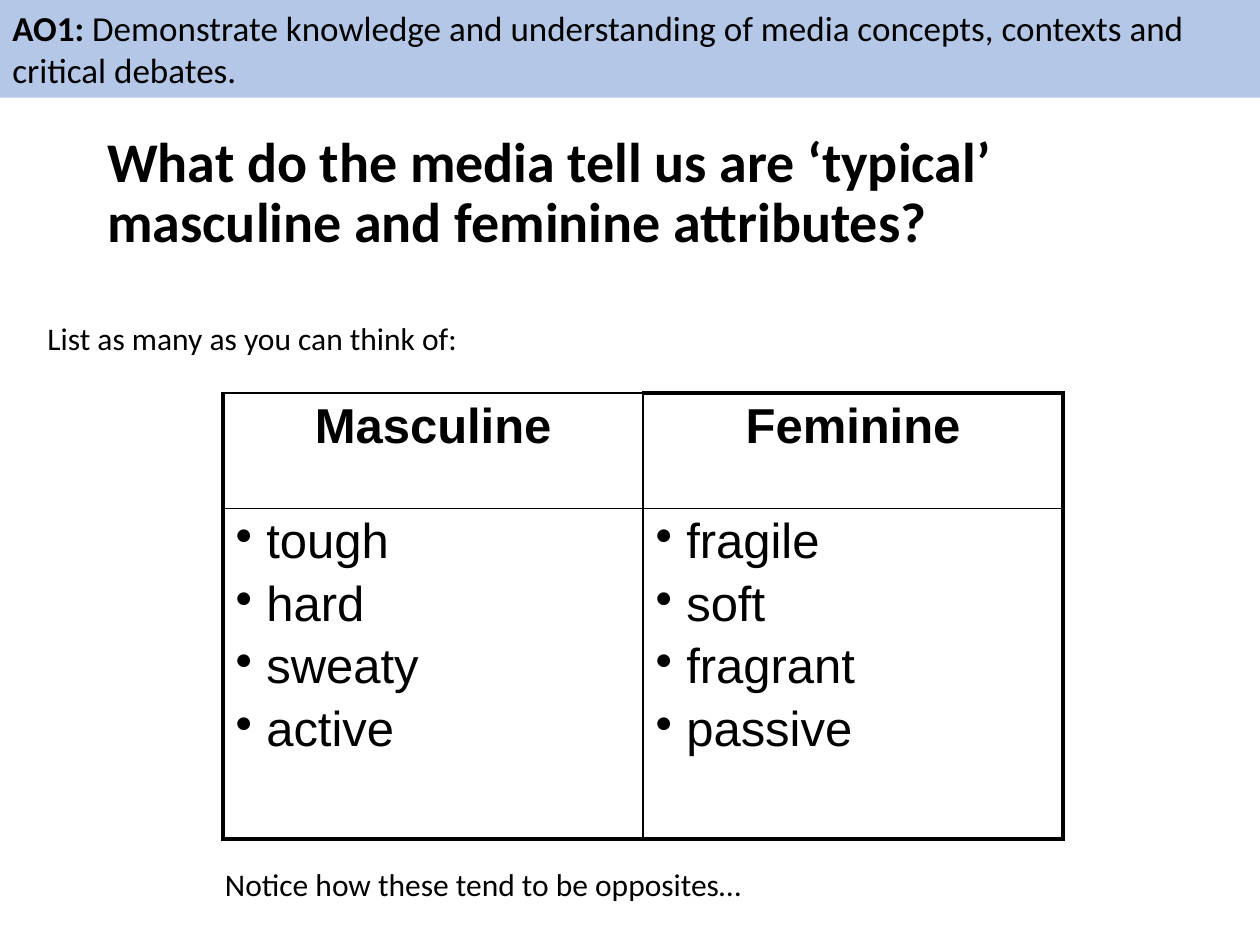
from pptx import Presentation, util as u
from pptx.dml.color import RGBColor
from pptx.enum import shapes, text
from pptx.oxml.ns import qn
from lxml import etree

Pt = u.Pt
HUES = {"ink": "000000", "band": "B4C7E7", "paper": "FFFFFF"}
THIN, THICK = 1, 2.25
WORDS = {
    "Masculine": ["tough", "hard", "sweaty", "active"],
    "Feminine": ["fragile", "soft", "fragrant", "passive"],
}


def hue(name):
    return RGBColor.from_string(HUES[name])


def style(font, size, name="Calibri", bold=False):
    form = {"size": Pt(size), "name": name, "bold": bold}
    for key, val in form.items():
        setattr(font, key, val)
    font.color.rgb = hue("ink")


def place(shape, left, top, width, height):
    form = {"left": left, "top": top, "width": width, "height": height}
    for key, val in form.items():
        setattr(shape, key, Pt(val))


def add_title(slide, words):
    title = slide.shapes.title
    place(title, 54, 66, 612, 90)
    frame = title.text_frame
    frame.text = words
    frame.word_wrap = True
    frame.vertical_anchor = text.MSO_ANCHOR.MIDDLE
    para = frame.paragraphs[0]
    para.alignment = text.PP_ALIGN.LEFT
    para.line_spacing = 0.9
    style(para.runs[0].font, 32, bold=True)


def add_note(slide, words, left, top, width):
    box = slide.shapes.add_textbox(Pt(left), Pt(top), Pt(width), Pt(36))
    frame = box.text_frame
    frame.word_wrap = True
    frame.text = words
    style(frame.paragraphs[0].runs[0].font, 18)


def add_band(slide, label, words):
    band = slide.shapes.add_shape(
        shapes.MSO_SHAPE.RECTANGLE, 0, 0, Pt(720), Pt(55.75))
    band.shadow.inherit = False
    band.fill.solid()
    band.fill.fore_color.rgb = hue("band")
    band.line.fill.background()
    frame = band.text_frame
    frame.word_wrap = True
    frame.vertical_anchor = text.MSO_ANCHOR.TOP
    para = frame.paragraphs[0]
    para.alignment = text.PP_ALIGN.LEFT
    for part, bold in ((label, True), (words, False)):
        run = para.add_run()
        run.text = part
        style(run.font, 20, bold=bold)


def set_edges(cell, sides):
    # Borders come before the fill in the cell's properties
    props = cell._tc.get_or_add_tcPr()
    for tag, width in sides.items():
        line = etree.SubElement(props, qn(f"a:{tag}"), w=str(Pt(width)))
        fill = etree.SubElement(line, qn("a:solidFill"))
        etree.SubElement(fill, qn("a:srgbClr"), val=HUES["ink"])
    cell.fill.solid()
    cell.fill.fore_color.rgb = hue("paper")


def set_bullet(para):
    props = para._p.get_or_add_pPr()
    props.set("marL", str(Pt(17.5)))
    props.set("indent", str(Pt(-17.5)))
    etree.SubElement(props, qn("a:buChar"), char="•")


def fill_cell(cell, lines, head):
    frame = cell.text_frame
    for i, line in enumerate(lines):
        para = frame.add_paragraph() if i else frame.paragraphs[0]
        if i:
            para.space_before = Pt(4.5)
        if head:
            para.alignment = text.PP_ALIGN.CENTER
        else:
            set_bullet(para)
        run = para.add_run()
        run.text = line
        style(run.font, 28, "Arial", head)


def add_grid(slide, words):
    grid = slide.shapes.add_table(
        2, 2, Pt(127.5), Pt(224.5), Pt(480), Pt(255)).table
    grid.first_row = grid.horz_banding = False
    for row, height in zip(grid.rows, (66, 189)):
        row.height = Pt(height)
    for c, (name, items) in enumerate(words.items()):
        grid.columns[c].width = Pt(240)
        for r, lines in enumerate(([name], items)):
            cell = grid.cell(r, c)
            # Thick outer frame, except above the first heading
            set_edges(cell, {
                "lnL": THIN if c else THICK,
                "lnR": THICK if c else THIN,
                "lnT": THICK if c and not r else THIN,
                "lnB": THICK if r else THIN,
            })
            fill_cell(cell, lines, r == 0)


def main():
    deck = Presentation()
    deck.slide_width, deck.slide_height = Pt(720), Pt(540)
    slide = deck.slides.add_slide(deck.slide_layouts[5])
    # Heading
    add_title(slide, "What do the media tell us are ‘typical’ "
                     "masculine and feminine attributes?")
    # Table and the notes around it
    add_grid(slide, WORDS)
    add_note(slide, "Notice how these tend to be opposites…", 121.5, 491, 504)
    add_note(slide, "List as many as you can think of:", 20, 179, 480)
    # Objective band
    add_band(slide, "AO1:", " Demonstrate knowledge and understanding of "
                            "media concepts, contexts and critical debates.")
    deck.save("out.pptx")


if __name__ == "__main__":
    main()
